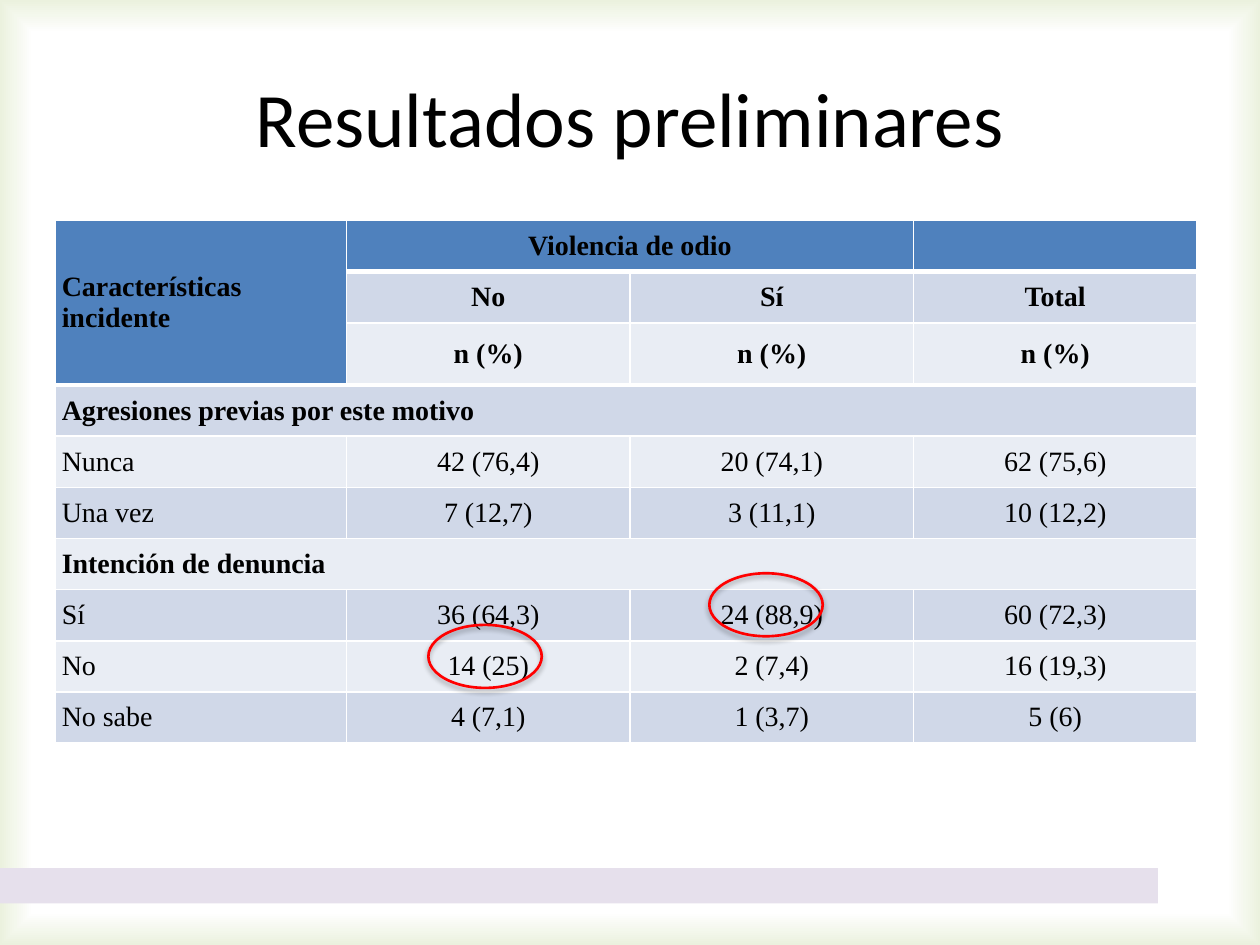
from dataclasses import dataclass

from lxml.etree import SubElement
from pptx import Presentation
from pptx.dml.color import RGBColor
from pptx.enum.shapes import MSO_SHAPE
from pptx.enum.text import MSO_ANCHOR, PP_ALIGN
from pptx.oxml import parse_xml
from pptx.oxml.ns import nsdecls, qn
from pptx.slide import Slide
from pptx.table import _Cell
from pptx.util import Inches, Pt

COLORS = {
    "text": "000000",
    "header": "4F81BD",
    "band_dark": "D0D8E8",
    "band_light": "E9EDF4",
    "border": "FFFFFF",
    "bar": "E6E0EC",
    "mark": "FF0000",
    "center": "FFFFFF",
    "edge": "EBF1DE",
    "shadow": "000000",
}
TITLE_FONT = {"name": "Calibri", "size": Pt(44), "bold": False}
CELL_FONT = {"name": "Times New Roman", "size": Pt(16)}
CELL_FORMAT = {
    "margin_left": Inches(0.05),
    "margin_right": Inches(0.05),
    "margin_top": 0,
    "margin_bottom": 0,
    "vertical_anchor": MSO_ANCHOR.MIDDLE,
}
COLUMN_WIDTHS = (2.31, 2.25, 2.25, 2.25)
TABLE_HEIGHT = 4.06
HEADER_ROWS = 3


@dataclass
class Row:
    cells: tuple[str, ...]
    bold: bool = False


@dataclass
class Mark:
    left: float
    top: float


ROWS = (
    Row(("Características incidente", "Violencia de odio", "", ""), True),
    Row(("", "No", "Sí", "Total"), True),
    Row(("", "n (%)", "n (%)", "n (%)"), True),
    Row(("Agresiones previas por este motivo", "", "", ""), True),
    Row(("Nunca", "42 (76,4)", "20 (74,1)", "62 (75,6)")),
    Row(("Una vez", "7 (12,7)", "3 (11,1)", "10 (12,2)")),
    Row(("Intención de denuncia", "", "", ""), True),
    Row(("Sí", "36 (64,3)", "24 (88,9)", "60 (72,3)")),
    Row(("No", "14 (25)", "2 (7,4)", "16 (19,3)")),
    Row(("No sabe", "4 (7,1)", "1 (3,7)", "5 (6)")),
)
MERGES = (((0, 0), (2, 0)), ((0, 1), (0, 2)), ((3, 0), (3, 3)), ((6, 0), (6, 3)))
MARKS = (Mark(5.63, 4.55), Mark(3.4, 4.96))


def rgb(key: str) -> RGBColor:
    return RGBColor.from_string(COLORS[key])


def apply(target: object, values: dict) -> None:
    for attribute, value in values.items():
        setattr(target, attribute, value)


def draw_background(slide: Slide) -> None:
    background = parse_xml(
        f'<p:bg {nsdecls("p", "a")}><p:bgPr><a:gradFill rotWithShape="1"><a:gsLst>'
        f'<a:gs pos="93000"><a:srgbClr val="{COLORS["center"]}"><a:alpha val="70000"/></a:srgbClr></a:gs>'
        f'<a:gs pos="100000"><a:srgbClr val="{COLORS["edge"]}"/></a:gs></a:gsLst>'
        '<a:path path="rect"><a:fillToRect l="50000" t="50000" r="50000" b="50000"/></a:path>'
        "</a:gradFill><a:effectLst/></p:bgPr></p:bg>"
    )
    slide.element.cSld.insert(0, background)


def draw_bar(slide: Slide) -> None:
    bar = slide.shapes.add_shape(
        MSO_SHAPE.RECTANGLE, 0, Inches(6.89), Inches(9.19), Inches(0.28)
    )
    bar.shadow.inherit = False
    bar.fill.solid()
    bar.fill.fore_color.rgb = rgb("bar")
    bar.line.fill.background()


def write_title(slide: Slide, wording: str) -> None:
    title = slide.shapes.title
    apply(title, {"left": Inches(0.5), "top": Inches(0.3),
                  "width": Inches(9), "height": Inches(1.25)})
    title.text_frame.text = wording
    title.text_frame.vertical_anchor = MSO_ANCHOR.MIDDLE
    heading = title.text_frame.paragraphs[0]
    heading.alignment = PP_ALIGN.CENTER
    apply(heading.font, TITLE_FONT)
    heading.font.color.rgb = rgb("text")


def set_borders(cell: _Cell, top: float, bottom: float) -> None:
    properties = cell._tc.get_or_add_tcPr()
    for side, width in {"L": 1, "R": 1, "T": top, "B": bottom}.items():
        border = SubElement(properties, qn(f"a:ln{side}"), w=str(Pt(width)))
        solid = SubElement(border, qn("a:solidFill"))
        SubElement(solid, qn("a:srgbClr"), val=COLORS["border"])


def band_color(row: int, column: int) -> str:
    if row == 0 or (column == 0 and row < HEADER_ROWS):
        return "header"
    return "band_dark" if row % 2 else "band_light"


def write_cell(cell: _Cell, wording: str, row: int, column: int, bold: bool) -> None:
    apply(cell, CELL_FORMAT)
    is_header = band_color(row, column) == "header"
    below_header = row > 0 and band_color(row - 1, column) == "header"
    set_borders(cell, 3 if below_header and not is_header else 1, 3 if is_header else 1)
    cell.fill.solid()
    cell.fill.fore_color.rgb = rgb(band_color(row, column))
    cell.text = wording
    entry = cell.text_frame.paragraphs[0]
    entry.alignment = PP_ALIGN.CENTER if column else PP_ALIGN.LEFT
    apply(entry.font, CELL_FONT | {"bold": bold})
    entry.font.color.rgb = rgb("text")


def draw_table(slide: Slide) -> None:
    results = slide.shapes.add_table(
        len(ROWS), len(COLUMN_WIDTHS), Inches(0.44), Inches(1.75),
        Inches(sum(COLUMN_WIDTHS)), Inches(TABLE_HEIGHT),
    ).table
    apply(results, {"first_row": False, "horz_banding": False})
    for column, width in zip(results.columns, COLUMN_WIDTHS):
        column.width = Inches(width)
    for i, row in enumerate(ROWS):
        for j, wording in enumerate(row.cells):
            write_cell(results.cell(i, j), wording, i, j, row.bold)
    for first, last in MERGES:
        results.cell(*first).merge(results.cell(*last))


def draw_mark(slide: Slide, mark: Mark) -> None:
    ring = slide.shapes.add_shape(
        MSO_SHAPE.OVAL, Inches(mark.left), Inches(mark.top), Inches(0.9), Inches(0.5)
    )
    ring.fill.background()
    ring.line.color.rgb = rgb("mark")
    ring.line.width = Pt(1.5)
    ring._element.spPr.append(parse_xml(
        f'<a:effectLst {nsdecls("a")}><a:outerShdw blurRad="{Pt(3.1)}" dist="{Pt(1.8)}" '
        f'dir="5400000" rotWithShape="0"><a:srgbClr val="{COLORS["shadow"]}">'
        '<a:alpha val="35000"/></a:srgbClr></a:outerShdw></a:effectLst>'
    ))


def main() -> None:
    presentation = Presentation()
    apply(presentation, {"slide_width": Inches(10), "slide_height": Inches(7.5)})
    slide = presentation.slides.add_slide(presentation.slide_layouts[5])
    draw_background(slide)
    draw_bar(slide)
    write_title(slide, "Resultados preliminares")
    draw_table(slide)
    for mark in MARKS:
        draw_mark(slide, mark)
    presentation.save("out.pptx")


if __name__ == "__main__":
    main()
